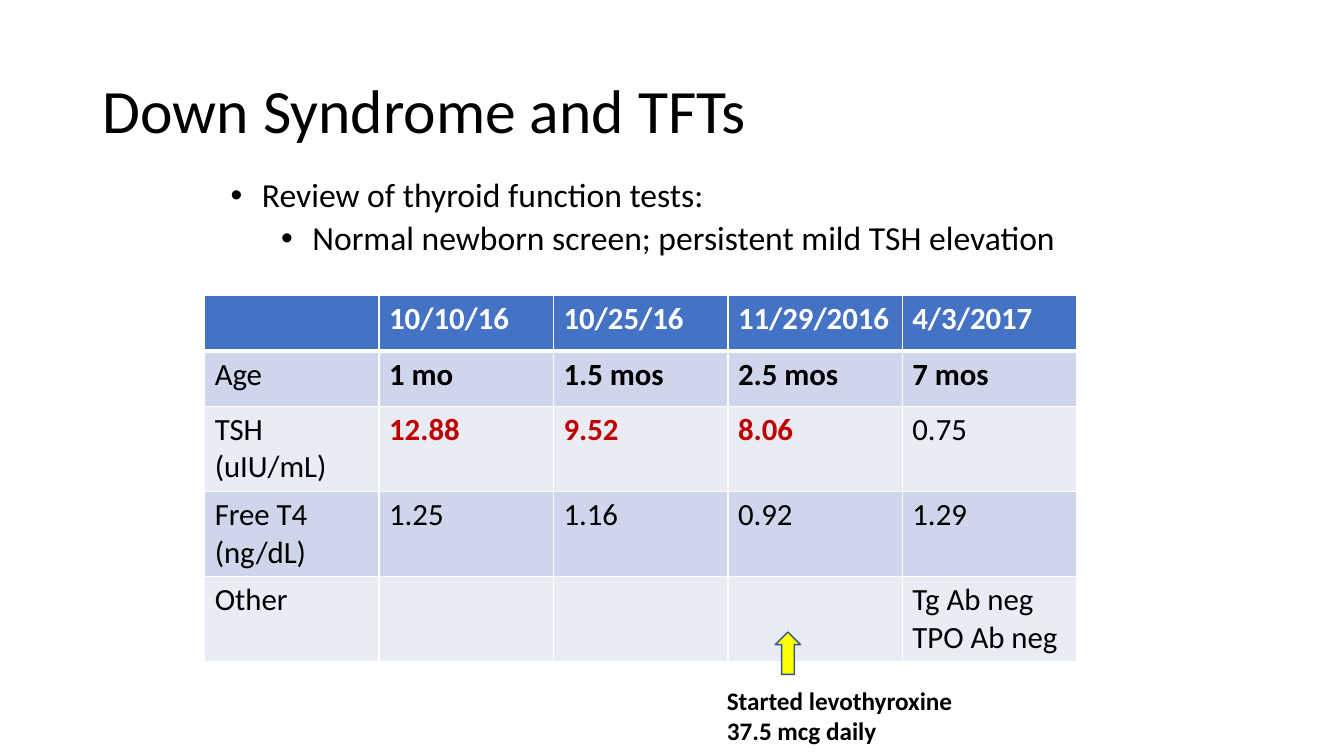
"""Build the slide on thyroid function tests in Down syndrome."""
from dataclasses import dataclass

from lxml.etree import SubElement
from pptx import Presentation
from pptx.dml.color import RGBColor
from pptx.enum.shapes import MSO_SHAPE
from pptx.enum.text import MSO_ANCHOR
from pptx.oxml.ns import qn
from pptx.util import Emu, Pt

HUES = {
    "ink": "000000", "white": "FFFFFF", "head": "4472C4", "dark": "CFD5EA",
    "light": "E9EBF5", "high": "C00000", "arrow": "FFFF00", "edge": "325491",
}
FONT = "Calibri"
GRID = (
    ("", "10/10/16", "10/25/16", "11/29/2016", "4/3/2017"),
    ("Age", "1 mo", "1.5 mos", "2.5 mos", "7 mos"),
    ("TSH\n(uIU/mL)", "12.88", "9.52", "8.06", "0.75"),
    ("Free T4\n(ng/dL)", "1.25", "1.16", "0.92", "1.29"),
    ("Other", "", "", "", "Tg Ab neg\nTPO Ab neg"),
)
ROWS = (55, 55, 84, 84, 84)
HIGH = ("12.88", "9.52", "8.06")


@dataclass(frozen=True)
class Line:
    text: str
    left: int = 0
    hang: int = 0
    before: int = 0


@dataclass(frozen=True)
class Block:
    box: tuple[int, int, int, int]
    lines: tuple[Line, ...]
    size: int
    bold: bool = False
    space: float = 1.0
    anchor: MSO_ANCHOR = MSO_ANCHOR.TOP


BLOCKS = (
    Block((92, 40, 1150, 145), (Line("Down Syndrome and TFTs"),), 44,
          space=0.9, anchor=MSO_ANCHOR.MIDDLE),
    Block((219, 172, 850, 442), (
        Line("Review of thyroid function tests:", 31, 31),
        Line("Normal newborn screen; persistent mild TSH elevation", 81, 31, 5),
    ), 24, space=0.9),
    Block((711, 675, 249, 71), (Line("Started levothyroxine 37.5 mcg daily"),), 18, True),
)


def px(size: int) -> Emu:
    return Emu(size * 9144)


def hue(name: str) -> RGBColor:
    return RGBColor.from_string(HUES[name])


def style(para, size: int, bold: bool, tint: str) -> None:
    font = para.font
    font.name, font.size, font.bold = FONT, Pt(size), bold
    font.color.rgb = hue(tint)


def draw_block(slide, block: Block) -> None:
    frame = slide.shapes.add_textbox(*map(px, block.box)).text_frame
    frame.word_wrap = True
    frame.vertical_anchor = block.anchor
    for i, line in enumerate(block.lines):
        para = frame.add_paragraph() if i else frame.paragraphs[0]
        para.text = line.text
        para.line_spacing = block.space
        if line.before:
            para.space_before = Pt(line.before)
        if line.hang:
            props = para._p.get_or_add_pPr()
            props.set("marL", str(px(line.left)))
            props.set("indent", str(-px(line.hang)))
            SubElement(props, qn("a:buFont"), typeface="Arial")
            SubElement(props, qn("a:buChar"), char="•")
        style(para, block.size, block.bold, "ink")


def draw_edges(cell, row: int) -> None:
    props = cell._tc.get_or_add_tcPr()
    thick = {0: "lnB", 1: "lnT"}.get(row)
    for i, side in enumerate(("lnL", "lnR", "lnT", "lnB")):
        width = Pt(3 if side == thick else 1)
        edge = SubElement(props, qn(f"a:{side}"), w=str(width))
        fill = SubElement(edge, qn("a:solidFill"))
        SubElement(fill, qn("a:srgbClr"), val=HUES["white"])
        props.insert(i, edge)


def draw_cell(cell, text: str, row: int) -> None:
    cell.text = text
    tint = "white" if row == 0 else "high" if text in HIGH else "ink"
    bold = row == 0 or text in HIGH or (row == 1 and text != "Age")
    for para in cell.text_frame.paragraphs:
        style(para, 22, bold, tint)
    cell.fill.solid()
    cell.fill.fore_color.rgb = hue("head" if row == 0 else "dark" if row % 2 else "light")
    draw_edges(cell, row)


def draw_table(slide) -> None:
    box = map(px, (203, 293, 865, sum(ROWS)))
    table = slide.shapes.add_table(len(GRID), len(GRID[0]), *box).table
    for col in table.columns:
        col.width = px(173)
    for r, texts in enumerate(GRID):
        table.rows[r].height = px(ROWS[r])
        for c, text in enumerate(texts):
            draw_cell(table.cell(r, c), text, r)


def draw_arrow(slide) -> None:
    arrow = slide.shapes.add_shape(MSO_SHAPE.UP_ARROW, *map(px, (769, 627, 25, 42)))
    arrow.shadow.inherit = False
    arrow.fill.solid()
    arrow.fill.fore_color.rgb = hue("arrow")
    arrow.line.color.rgb = hue("edge")
    arrow.line.width = Pt(1)


def main() -> None:
    deck = Presentation()
    deck.slide_width, deck.slide_height = px(1333), px(750)
    slide = deck.slides.add_slide(deck.slide_layouts[6])
    draw_table(slide)
    draw_arrow(slide)
    for block in BLOCKS:
        draw_block(slide, block)
    deck.save("out.pptx")


if __name__ == "__main__":
    main()
